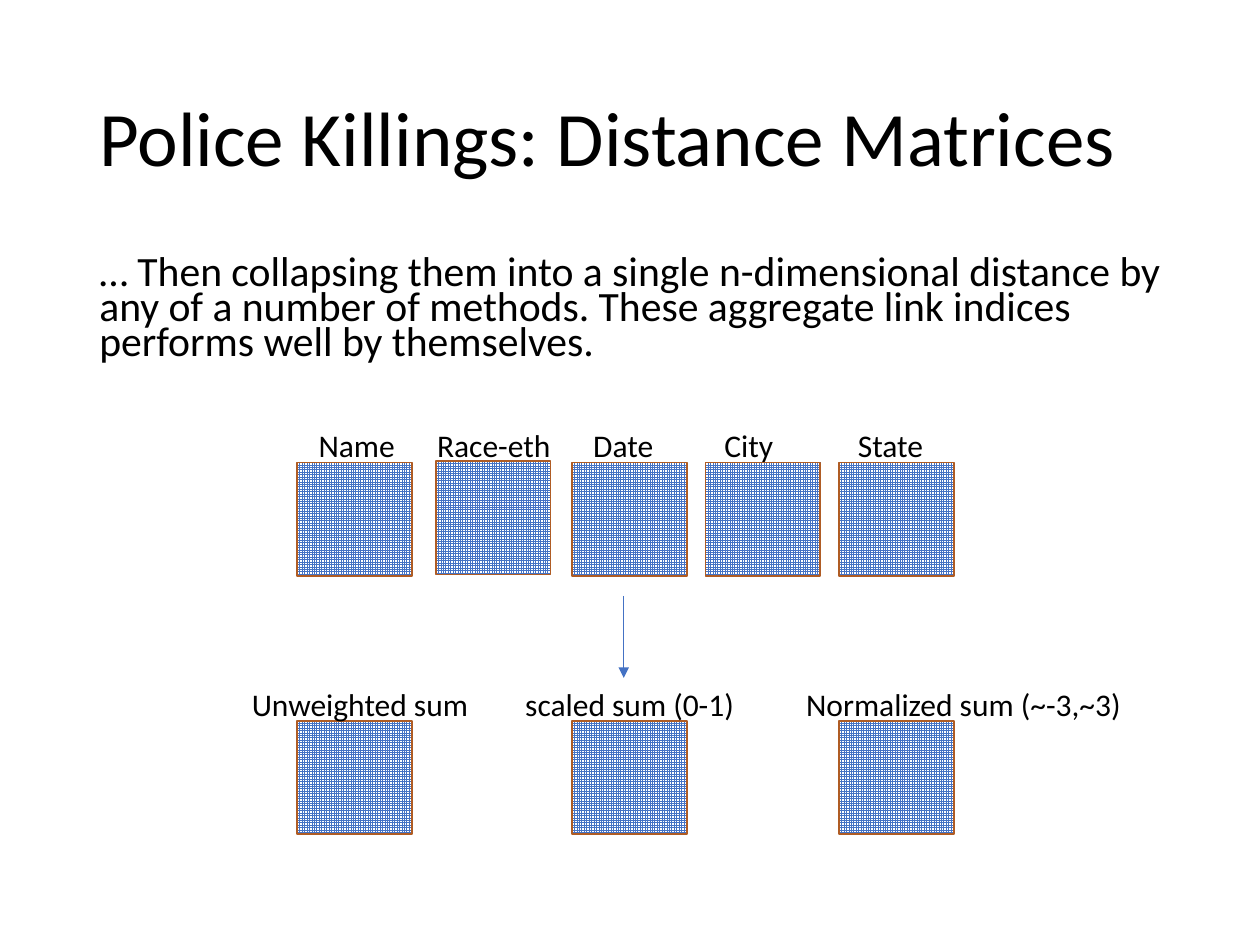
from dataclasses import dataclass

from lxml import etree
from pptx import Presentation
from pptx.dml.color import RGBColor
from pptx.enum.dml import MSO_PATTERN
from pptx.enum.shapes import MSO_CONNECTOR, MSO_SHAPE
from pptx.enum.text import MSO_ANCHOR
from pptx.oxml.ns import qn
from pptx.slide import Slide
from pptx.util import Inches, Pt

RECTANGLE = MSO_SHAPE.RECTANGLE
STRAIGHT = MSO_CONNECTOR.STRAIGHT
GRID = MSO_PATTERN.SMALL_GRID
TOP, MIDDLE = MSO_ANCHOR.TOP, MSO_ANCHOR.MIDDLE

BLACK = RGBColor(0x00, 0x00, 0x00)
WHITE = RGBColor(0xFF, 0xFF, 0xFF)
BLUE = RGBColor(0x44, 0x72, 0xC4)
BROWN = RGBColor(0xAF, 0x5C, 0x24)
FONT = "Calibri"

MATRIX_WIDTH, MATRIX_HEIGHT = 0.91, 0.9
FIELD_TOP, SUM_TOP = 3.67, 5.72


@dataclass(frozen=True)
class TextBlock:
    text: str
    left: float
    top: float
    width: float
    height: float
    size: float
    line_spacing: float = 1.0
    space_before: float = 0
    anchor: MSO_ANCHOR = TOP
    tabs: tuple[float, ...] = ()  # inches from the start of the text


@dataclass(frozen=True)
class Matrix:
    left: float
    top: float


TEXT_BLOCKS = (
    TextBlock("Police Killings: Distance Matrices", 0.69, 0.4, 8.62, 1.45, 44,
              line_spacing=0.9, anchor=MIDDLE),
    TextBlock("… Then collapsing them into a single n-dimensional distance by any "
              "of a number of methods. These aggregate link indices performs well "
              "by themselves.", 0.69, 2, 8.62, 1.05, 23.8,
              line_spacing=0.7, space_before=10),
    TextBlock("Name\tRace-eth\tDate\tCity\tState", 2.43, 3.33, 5.15, 0.4, 18,
              tabs=(0.94, 2.18, 3.22, 4.28)),
    TextBlock("Unweighted sum\tscaled sum (0-1)\tNormalized sum (~-3,~3)",
              1.9, 5.39, 7.42, 0.4, 18, tabs=(2.17, 4.4)),
)

MATRICES = (
    Matrix(2.36, FIELD_TOP),
    Matrix(3.46, FIELD_TOP - 0.01),
    Matrix(4.54, FIELD_TOP),
    Matrix(5.6, FIELD_TOP),
    Matrix(6.66, FIELD_TOP),
    Matrix(2.36, SUM_TOP),
    Matrix(4.54, SUM_TOP),
    Matrix(6.66, SUM_TOP),
)


def draw_matrix(slide: Slide, matrix: Matrix) -> None:
    square = slide.shapes.add_shape(
        RECTANGLE, Inches(matrix.left), Inches(matrix.top),
        Inches(MATRIX_WIDTH), Inches(MATRIX_HEIGHT))
    square.shadow.inherit = False
    square.fill.patterned()
    square.fill.pattern = GRID
    square.fill.fore_color.rgb = BLUE
    square.fill.back_color.rgb = WHITE
    square.line.color.rgb = BROWN
    square.line.width = Pt(1)


def draw_text(slide: Slide, block: TextBlock) -> None:
    box = slide.shapes.add_textbox(Inches(block.left), Inches(block.top),
                                   Inches(block.width), Inches(block.height))
    frame = box.text_frame
    frame.word_wrap = True
    frame.vertical_anchor = block.anchor
    paragraph = frame.paragraphs[0]
    paragraph.text = block.text
    paragraph.line_spacing = block.line_spacing
    paragraph.space_before = Pt(block.space_before)
    paragraph.font.name = FONT
    paragraph.font.size = Pt(block.size)
    paragraph.font.color.rgb = BLACK
    if block.tabs:
        properties = paragraph._p.get_or_add_pPr()
        tab_list = etree.Element(qn("a:tabLst"))
        for position in block.tabs:
            etree.SubElement(tab_list, qn("a:tab"),
                             pos=str(Inches(position)), algn="l")
        properties.find(qn("a:defRPr")).addprevious(tab_list)


def draw_down_arrow(slide: Slide, x: float, top: float, bottom: float) -> None:
    arrow = slide.shapes.add_connector(STRAIGHT, Inches(x), Inches(top),
                                       Inches(x), Inches(bottom))
    arrow.line.color.rgb = BLUE
    arrow.line.width = Pt(0.5)
    etree.SubElement(arrow.line._get_or_add_ln(), qn("a:tailEnd"), type="triangle")
    etree.SubElement(arrow._element.spPr, qn("a:effectLst"))


def main() -> None:
    presentation = Presentation()
    presentation.slide_width = Inches(10)
    presentation.slide_height = Inches(7.5)
    slide = presentation.slides.add_slide(presentation.slide_layouts[6])
    for matrix in MATRICES:
        draw_matrix(slide, matrix)
    draw_down_arrow(slide, 4.95, 4.73, 5.38)
    for block in TEXT_BLOCKS:
        draw_text(slide, block)
    presentation.save("out.pptx")


if __name__ == "__main__":
    main()
